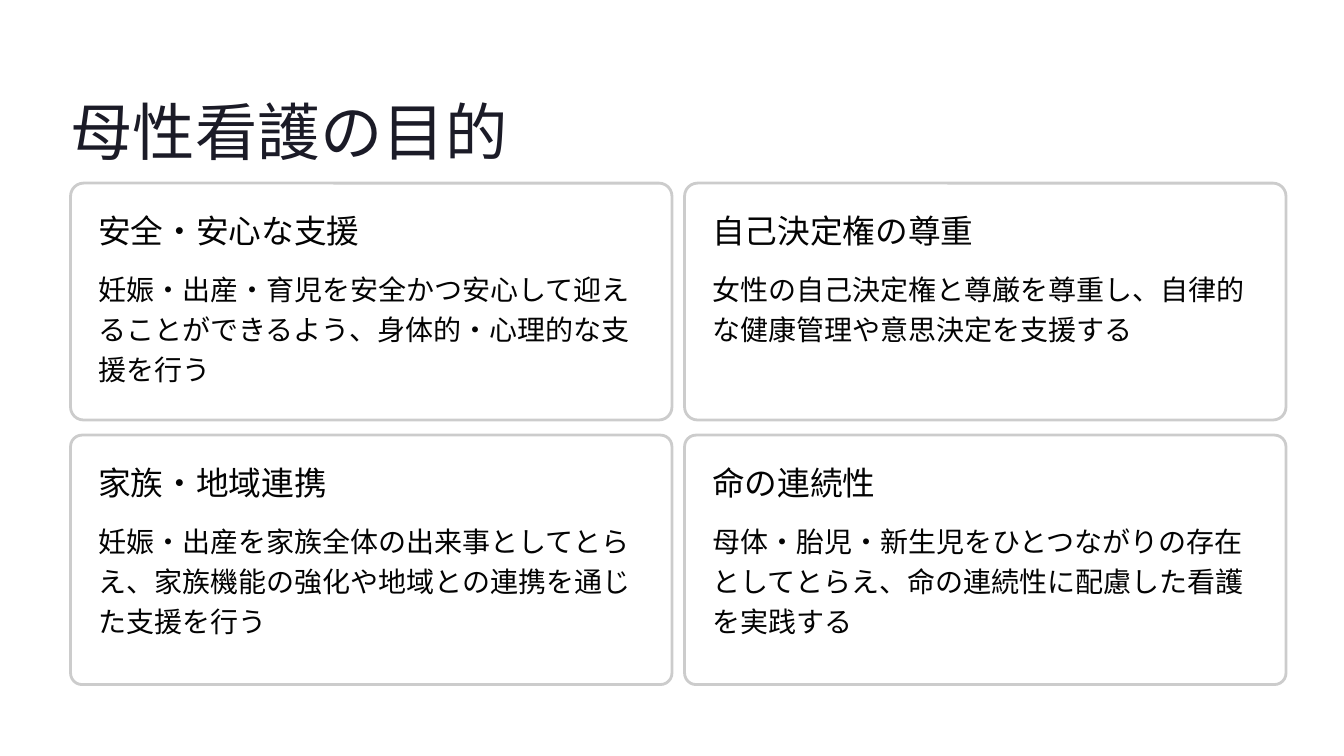
from dataclasses import dataclass

from lxml import etree
from pptx import Presentation
from pptx import util as u
from pptx.dml import color
from pptx.enum import shapes, text
from pptx.oxml import ns


@dataclass
class Style:
    font: str
    size: float
    pitch: float
    hue: str
    wrap: bool


@dataclass
class Row:
    top: float
    high: float
    curve: float
    body: float


@dataclass
class Card:
    row: int
    col: int
    head: str
    body: str


TITLE = Style("Inter", 53.5, 67, "1B1B27", False)
HEAD = Style("Inter", 28, 33.5, "030303", False)
BODY = Style("Cabin", 24, 34.5, "030303", True)

LEFT, WIDE, STEP, PAD = 0.84, 7.16, 7.31, 0.33
ROWS = [Row(2.18, 2.82, 0.055, 1.19), Row(5.18, 2.97, 0.046, 1.78)]
CARDS = [
    Card(0, 0, "安全・安心な支援",
         "妊娠・出産・育児を安全かつ安心して迎えることができるよう、身体的・心理的な支援を行う"),
    Card(0, 1, "自己決定権の尊重",
         "女性の自己決定権と尊厳を尊重し、自律的な健康管理や意思決定を支援する"),
    Card(1, 0, "家族・地域連携",
         "妊娠・出産を家族全体の出来事としてとらえ、家族機能の強化や地域との連携を通じた支援を行う"),
    Card(1, 1, "命の連続性",
         "母体・胎児・新生児をひとつながりの存在としてとらえ、命の連続性に配慮した看護を実践する"),
]


def paint(fmt, hue: str) -> None:
    fmt.solid()
    fmt.fore_color.rgb = color.RGBColor.from_string(hue)


def write(slide, words: str, style: Style,
          x: float, y: float, w: float, h: float) -> None:
    box = slide.shapes.add_textbox(*map(u.Inches, (x, y, w, h)))
    frame = box.text_frame
    para = frame.paragraphs[0]
    run = para.add_run()
    run.text = words
    looks = {
        frame: {"margin_left": 0, "margin_top": 0, "margin_right": 0,
                "margin_bottom": 0, "word_wrap": style.wrap,
                "vertical_anchor": text.MSO_ANCHOR.TOP},
        para: {"line_spacing": u.Pt(style.pitch),
               "alignment": text.PP_ALIGN.LEFT},
        run.font: {"name": style.font, "size": u.Pt(style.size)},
    }
    for part, values in looks.items():
        for name, value in values.items():
            setattr(part, name, value)
    paint(run.font.fill, style.hue)


def panel(slide, x: float, row: Row) -> None:
    shape = slide.shapes.add_shape(
        shapes.MSO_SHAPE.ROUNDED_RECTANGLE,
        *map(u.Inches, (x, row.top, WIDE, row.high)))
    shape.adjustments[0] = row.curve
    shape.shadow.inherit = False
    paint(shape.fill, "FFFFFF")
    paint(shape.line.fill, "CCCCCC")
    shape.line.width = u.Pt(2.4)
    # Slightly sheer fill
    tint = shape.fill._xPr.find(ns.qn("a:solidFill"))[0]
    etree.SubElement(tint, ns.qn("a:alpha"), val="95000")


def draw(slide, card: Card) -> None:
    row = ROWS[card.row]
    x = LEFT + card.col * STEP
    panel(slide, x, row)
    write(slide, card.head, HEAD, x + PAD, row.top + PAD, 3.82, 0.58)
    write(slide, card.body, BODY, x + PAD, row.top + 0.98, 6.48, row.body)


def main() -> None:
    deck = Presentation()
    deck.slide_width, deck.slide_height = u.Inches(16), u.Inches(9)
    slide = deck.slides.add_slide(deck.slide_layouts[6])
    paint(slide.background.fill, "FFFFFF")

    # Title
    write(slide, "母性看護の目的", TITLE, LEFT, 1.07, 7.49, 0.94)

    # Two by two cards
    for card in CARDS:
        draw(slide, card)

    deck.save("out.pptx")


if __name__ == "__main__":
    main()
